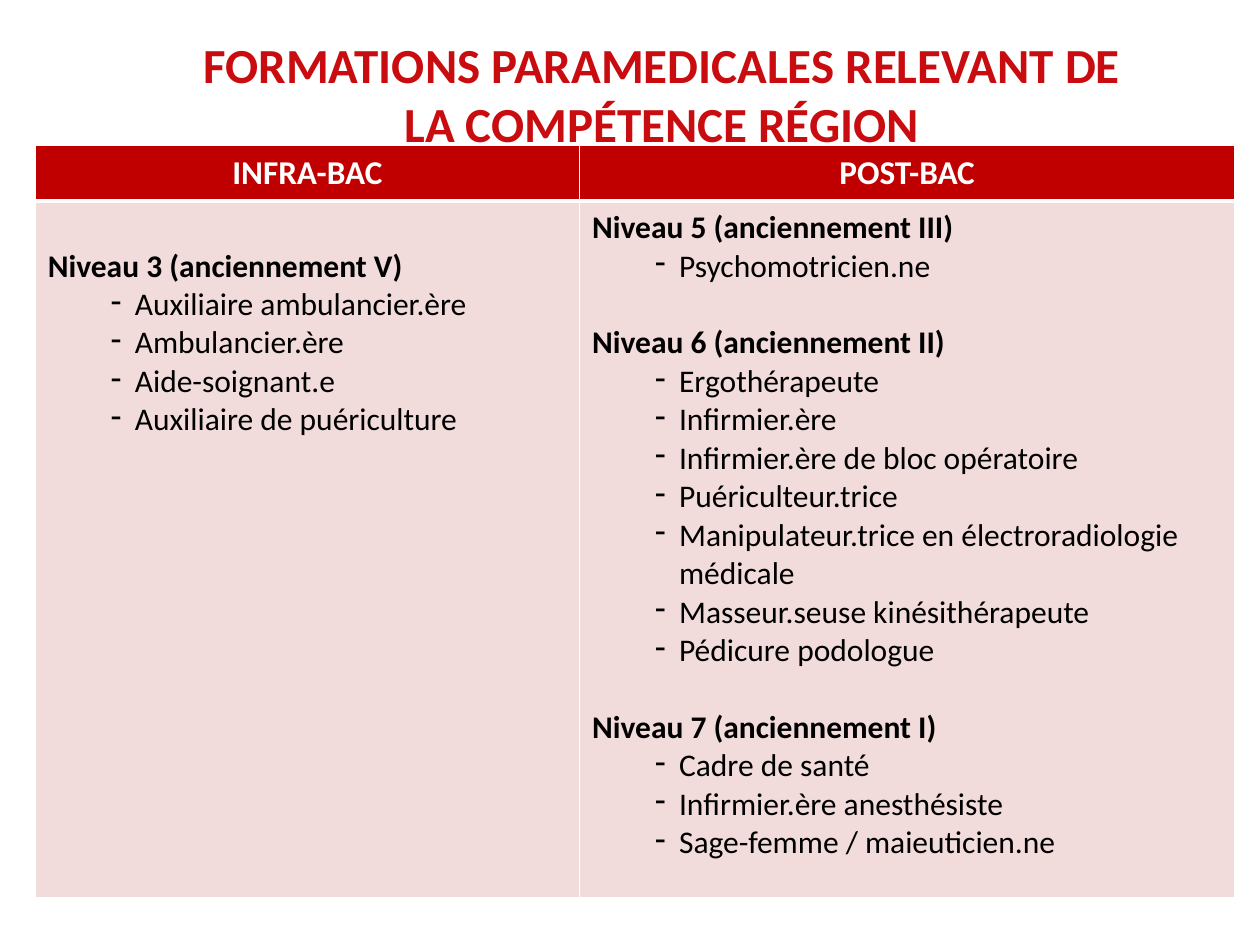
from dataclasses import dataclass

from lxml.etree import SubElement
from pptx import Presentation
from pptx.dml.color import RGBColor
from pptx.enum.text import MSO_ANCHOR, MSO_AUTO_SIZE, PP_ALIGN
from pptx.oxml import parse_xml
from pptx.oxml.ns import nsdecls, qn
from pptx.util import Inches, Pt


@dataclass(frozen=True)
class Theme:
    font: str = "Calibri"
    title_color: str = "C90C0F"
    header_fill: str = "C00000"
    body_fill: str = "F2DCDB"
    light: str = "FFFFFF"
    dark: str = "000000"
    title_size: float = 28
    header_size: float = 19
    body_size: float = 18
    line_gap: float = 22  # one body line, in points


class SlideBuilder:
    def __init__(self, presentation, theme):
        self.presentation = presentation
        self.theme = theme
        self.slide = presentation.slides.add_slide(presentation.slide_layouts[5])

    def across(self, share):
        return round(self.presentation.slide_width * share)

    def down(self, share):
        return round(self.presentation.slide_height * share)

    def format_runs(self, paragraph, size, color, bold):
        for run in paragraph.runs:
            run.font.name = self.theme.font
            run.font.size = Pt(size)
            run.font.bold = bold
            run.font.color.rgb = RGBColor.from_string(color)

    def title(self, text, left, top, width, height):
        shape = self.slide.shapes.title
        shape.left, shape.top = self.across(left), self.down(top)
        shape.width, shape.height = self.across(width), self.down(height)
        text_frame = shape.text_frame
        text_frame.text = text
        text_frame.word_wrap = True
        text_frame.auto_size = MSO_AUTO_SIZE.NONE
        text_frame.vertical_anchor = MSO_ANCHOR.TOP
        paragraph = text_frame.paragraphs[0]
        paragraph.alignment = PP_ALIGN.CENTER
        self.format_runs(paragraph, self.theme.title_size, self.theme.title_color, True)

    def table(self, columns, left, top, widths, heights):
        frame = self.slide.shapes.add_table(
            len(heights), len(widths), self.across(left), self.down(top),
            self.across(sum(widths)), self.down(sum(heights)))
        table = frame.table
        for column, width in zip(table.columns, widths):
            column.width = self.across(width)
        for row, height in zip(table.rows, heights):
            row.height = self.down(height)
        for index, (heading, lines_above, groups) in enumerate(columns):
            self.header_cell(table.cell(0, index), heading)
            self.list_cell(table.cell(1, index), lines_above, groups)

    def style_cell(self, cell, fill, top_width, bottom_width):
        cell.margin_left = cell.margin_right = Inches(0.1)
        cell.margin_top = cell.margin_bottom = Inches(0.06)
        cell.fill.solid()
        cell.fill.fore_color.rgb = RGBColor.from_string(fill)
        # Borders come before the fill in the cell properties
        properties = cell._tc.get_or_add_tcPr()
        sides = {"lnL": 1, "lnR": 1, "lnT": top_width, "lnB": bottom_width}
        for position, (side, width) in enumerate(sides.items()):
            properties.insert(position, parse_xml(
                f'<a:{side} {nsdecls("a")} w="{Pt(width)}"><a:solidFill>'
                f'<a:srgbClr val="{self.theme.light}"/></a:solidFill></a:{side}>'))

    def header_cell(self, cell, text):
        self.style_cell(cell, self.theme.header_fill, 1, 3)
        cell.text_frame.text = text
        paragraph = cell.text_frame.paragraphs[0]
        paragraph.alignment = PP_ALIGN.CENTER
        self.format_runs(paragraph, self.theme.header_size, self.theme.light, True)

    def list_cell(self, cell, lines_above, groups):
        self.style_cell(cell, self.theme.body_fill, 3, 1)
        cell.margin_top += Pt(lines_above * self.theme.line_gap)
        text_frame = cell.text_frame
        text_frame.text = "\n".join(
            line for level, jobs in groups.items() for line in (level, *jobs))
        for number, paragraph in enumerate(text_frame.paragraphs):
            is_level = paragraph.text in groups
            if not is_level:
                self.dash(paragraph)
            elif number:
                paragraph.space_before = Pt(self.theme.line_gap)
            self.format_runs(paragraph, self.theme.body_size, self.theme.dark, is_level)

    def dash(self, paragraph):
        paragraph.level = 1
        properties = paragraph._p.get_or_add_pPr()
        properties.set("marL", str(Inches(0.69)))
        properties.set("indent", str(Inches(-0.19)))
        SubElement(properties, qn("a:buFontTx"))
        SubElement(properties, qn("a:buChar")).set("char", "-")


# Heading, free lines above the list, and jobs by level
COLUMNS = [
    ("INFRA-BAC", 1, {
        "Niveau 3 (anciennement V)": [
            "Auxiliaire ambulancier.ère", "Ambulancier.ère",
            "Aide-soignant.e", "Auxiliaire de puériculture"],
    }),
    ("POST-BAC", 0, {
        "Niveau 5 (anciennement III)": ["Psychomotricien.ne"],
        "Niveau 6 (anciennement II)": [
            "Ergothérapeute", "Infirmier.ère", "Infirmier.ère de bloc opératoire",
            "Puériculteur.trice", "Manipulateur.trice en électroradiologie médicale",
            "Masseur.seuse kinésithérapeute", "Pédicure podologue"],
        "Niveau 7 (anciennement I)": [
            "Cadre de santé", "Infirmier.ère anesthésiste",
            "Sage-femme / maieuticien.ne"],
    }),
]


def main():
    presentation = Presentation()
    presentation.slide_width, presentation.slide_height = Inches(10), Inches(7.5)
    builder = SlideBuilder(presentation, Theme())

    # Title
    builder.title("FORMATIONS PARAMEDICALES RELEVANT DE LA COMPÉTENCE RÉGION",
                  left=0.14, top=0.03, width=0.77, height=0.1)

    # Table of training courses
    builder.table(COLUMNS, left=0.028, top=0.154,
                  widths=[0.432, 0.52], heights=[0.055, 0.737])

    presentation.save("out.pptx")


if __name__ == "__main__":
    main()
